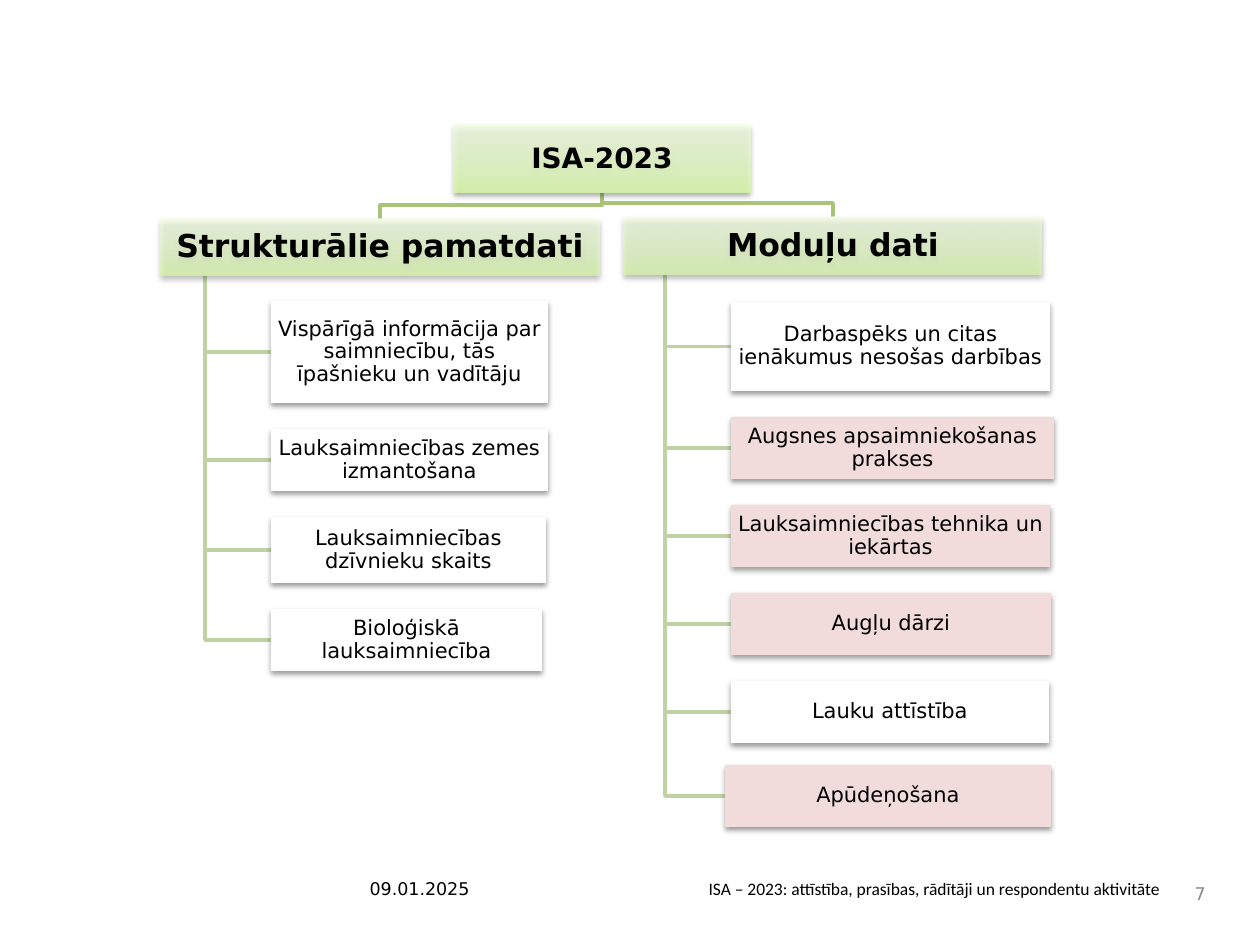
import pptx
import pptx.dml.color
import pptx.enum.text
import pptx.oxml
import pptx.oxml.ns
import pptx.util
from pptx.enum.shapes import MSO_SHAPE

PX = 914400 / 126  # EMU in one px
GAP = 26           # between stacked topics
TOPIC_INDENT = 66  # from trunk to topic
COLORS = {
    "text": "000000", "number": "898989", "white": "FFFFFF", "pink": "F2DCDB",
    "branch": "C0D2A4", "root_line": "A9C379", "shadow": "000000",
    "green_dark": "DAFDA7", "green_mid": "E4FCC2", "green_light": "F5FFE7",
}
ALIGN = pptx.enum.text.PP_ALIGN
ANCHOR = pptx.enum.text.MSO_ANCHOR
SANS = "DejaVu Sans"

# left, top, width, height of each header
ROOT = (454, 125, 296, 68)
# header text, box, trunk x, first topic top,
# topics: text, width, height, fill, shift x, shift y
BRANCHES = [
    ("Strukturālie pamatdati", (161, 219, 438, 57), 205, 301, [
        ("Vispārīgā informācija par saimniecību, tās īpašnieku un vadītāju",
         277, 102, "white", 0, 0),
        ("Lauksaimniecības zemes izmantošana", 277, 62, "white", 0, 0),
        ("Lauksaimniecības dzīvnieku skaits", 275, 66, "white", 0, 0),
        ("Bioloģiskā lauksaimniecība", 271, 62, "white", 0, 0),
    ]),
    ("Moduļu dati", (624, 217, 418, 58), 665, 302, [
        ("Darbaspēks un citas ienākumus nesošas darbības",
         319, 89, "white", 0, 0),
        ("Augsnes apsaimniekošanas prakses", 323, 62, "pink", 0, 0),
        ("Lauksaimniecības tehnika un iekārtas", 319, 62, "pink", 0, 0),
        ("Augļu dārzi", 320, 62, "pink", 0, 0),
        ("Lauku attīstība", 318, 62, "white", 0, 0),
        ("Apūdeņošana", 326, 62, "pink", -6, -4),
    ]),
]


def px(value):
    return pptx.util.Emu(round(value * PX))


def rgb(name):
    return pptx.dml.color.RGBColor.from_string(COLORS[name])


def apply(target, values):
    for name, value in values.items():
        setattr(target, name, value)


def write(shape, text, size, align, anchor, font=SANS, color="text",
          bold=False, spacing=1.0, inset=None):
    """Put one formatted paragraph into a shape."""
    frame = shape.text_frame
    frame.text = text
    side, edge = (inset, inset) if inset else (12.6, 6.3)
    apply(frame, {
        "word_wrap": True, "vertical_anchor": anchor,
        "auto_size": pptx.enum.text.MSO_AUTO_SIZE.NONE,
        "margin_left": px(side), "margin_right": px(side),
        "margin_top": px(edge), "margin_bottom": px(edge),
    })
    paragraph = frame.paragraphs[0]
    apply(paragraph, {"alignment": align, "line_spacing": spacing,
                      "space_before": pptx.util.Pt(0)})
    run_font = paragraph.runs[0].font
    apply(run_font, {"name": font, "size": pptx.util.Pt(size), "bold": bold})
    run_font.color.rgb = rgb(color)


def add_xml(parent, xml, before=None):
    namespace = pptx.oxml.ns.nsdecls("a")
    element = pptx.oxml.parse_xml(xml.replace(">", f" {namespace}>", 1))
    if before is None:
        parent.append(element)
    else:
        before.addprevious(element)


def fill_green(shape, alpha):
    """Translucent gradient, darkest at the bottom."""
    stops = "".join(
        f'<a:gs pos="{pos}000"><a:srgbClr val="{COLORS[name]}">'
        f'<a:alpha val="{alpha}000"/></a:srgbClr></a:gs>'
        for pos, name in ((0, "green_dark"), (35, "green_mid"), (100, "green_light")))
    properties = shape.fill._xPr
    add_xml(properties,
            f'<a:gradFill rotWithShape="1"><a:gsLst>{stops}</a:gsLst>'
            '<a:lin ang="16200000" scaled="0"/></a:gradFill>',
            before=properties.find(pptx.oxml.ns.qn("a:ln")))


def add_box(slide, box, text, size, bold=False):
    shape = slide.shapes.add_shape(MSO_SHAPE.RECTANGLE, *map(px, box))
    shape.line.fill.background()
    add_xml(shape.fill._xPr,
            '<a:effectLst><a:outerShdw blurRad="40000" dist="20000" dir="5400000" '
            f'rotWithShape="0"><a:srgbClr val="{COLORS["shadow"]}">'
            '<a:alpha val="38000"/></a:srgbClr></a:outerShdw></a:effectLst>')
    write(shape, text, size, ALIGN.CENTER, ANCHOR.MIDDLE, bold=bold,
          spacing=0.9, inset=1)
    return shape


def add_elbow(slide, points, color):
    (start, *rest) = [(px(x), px(y)) for x, y in points]
    builder = slide.shapes.build_freeform(*start)
    builder.add_line_segments(rest, close=False)
    elbow = builder.convert_to_shape()
    elbow.shadow.inherit = False
    elbow.fill.background()
    elbow.line.color.rgb = rgb(color)
    elbow.line.width = pptx.util.Pt(2)


def place_topics(trunk, top, topics):
    """Stack the topics with equal gaps."""
    for text, width, height, fill, dx, dy in topics:
        yield (trunk + TOPIC_INDENT + dx, top + dy, width, height), text, fill
        top += height + GAP


def add_branch_lines(slide, header, trunk, topics):
    left, top, width, height = header
    for (x, y, _, h), _, _ in reversed(topics):
        middle = y + h / 2
        add_elbow(slide, [(trunk, top + height), (trunk, middle), (x, middle)], "branch")
    root_x, root_bottom = ROOT[0] + ROOT[2] / 2, ROOT[1] + ROOT[3]
    center, bend = left + width / 2, top - 14
    add_elbow(slide, [(root_x, root_bottom), (root_x, bend),
                      (center, bend), (center, top)], "root_line")


def add_footer(slide):
    footers = {
        1: ((357, 872, 273, 42), "09.01.2025", ALIGN.LEFT, SANS),
        3: ((672, 872, 504, 42),
            "ISA – 2023: attīstība, prasības, rādītāji un respondentu aktivitāte ",
            ALIGN.RIGHT, "Calibri"),
    }
    for holder in list(slide.placeholders):
        index = holder.placeholder_format.idx
        if index not in footers:
            holder.element.getparent().remove(holder.element)
            continue
        box, text, align, font = footers[index]
        apply(holder, dict(zip(("left", "top", "width", "height"), map(px, box))))
        write(holder, text, 10, align, ANCHOR.TOP, font=font)
    number = slide.shapes.add_textbox(*map(px, (1176, 872, 42, 42)))
    write(number, "7", 10, ALIGN.RIGHT, ANCHOR.MIDDLE, color="number")


def main():
    deck = pptx.Presentation()
    apply(deck, {"slide_width": px(1260), "slide_height": px(945)})
    slide = deck.slides.add_slide(deck.slide_layouts[4])
    add_footer(slide)

    # Lines lie behind the boxes
    branches = [(title, header, trunk, list(place_topics(trunk, top, topics)))
                for title, header, trunk, top, topics in BRANCHES]
    for _, header, trunk, topics in reversed(branches):
        add_branch_lines(slide, header, trunk, topics)

    # Headers and their topics
    fill_green(add_box(slide, ROOT, "ISA-2023", 16, bold=True), 80)
    for title, header, _, topics in branches:
        fill_green(add_box(slide, header, title, 18, bold=True), 70)
        for box, text, fill in topics:
            topic = add_box(slide, box, text, 12)
            topic.fill.solid()
            topic.fill.fore_color.rgb = rgb(fill)

    deck.save("out.pptx")


if __name__ == "__main__":
    main()
